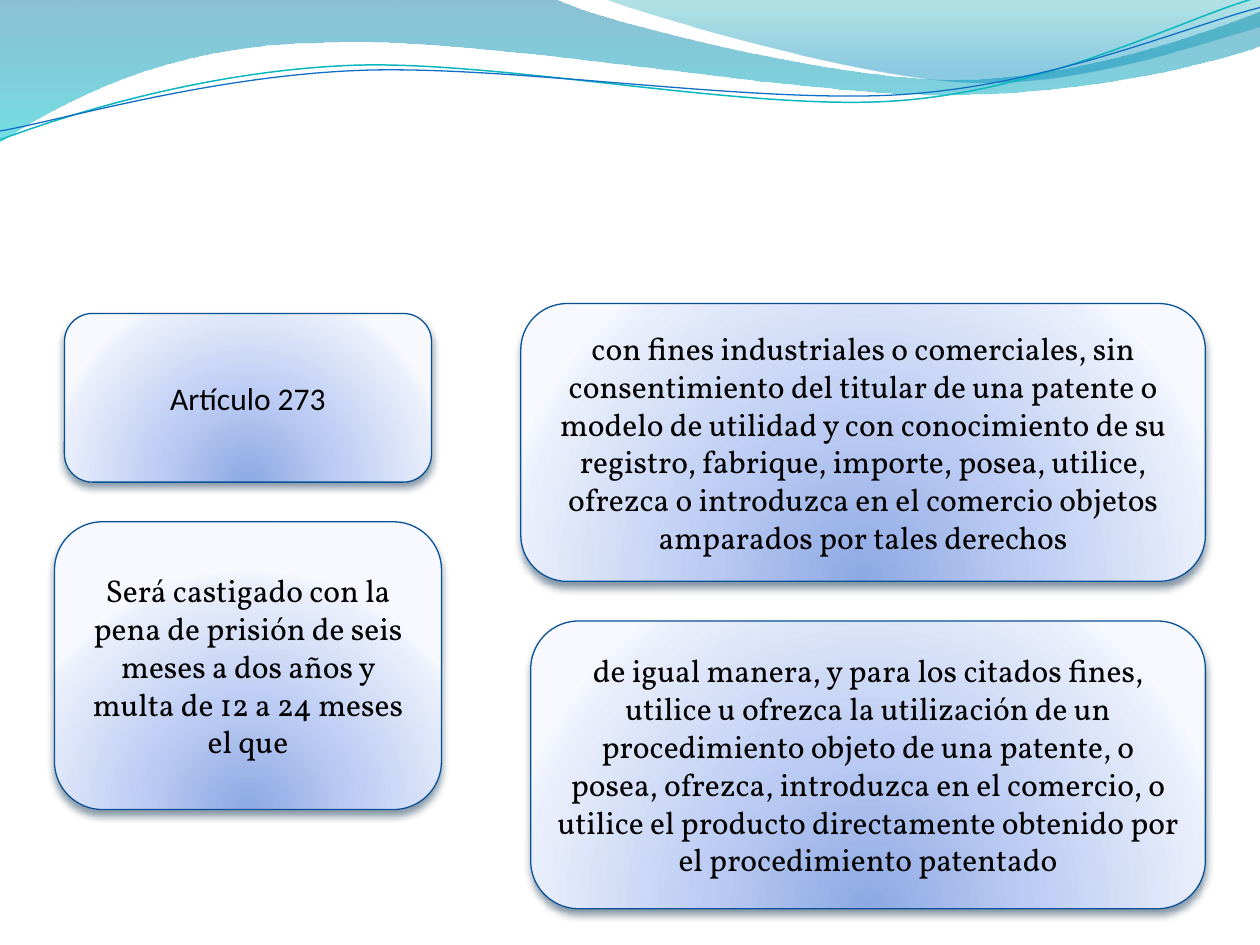
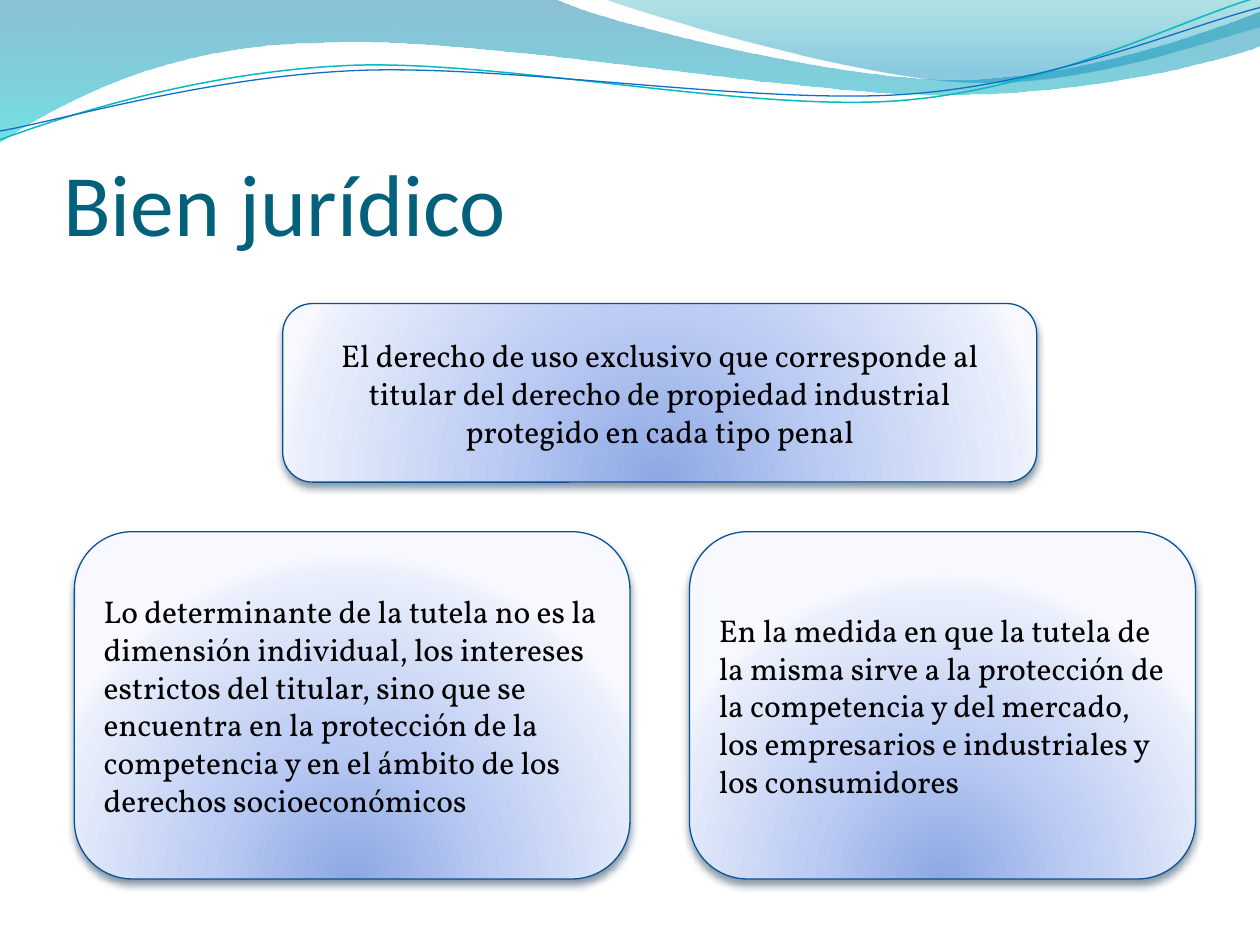
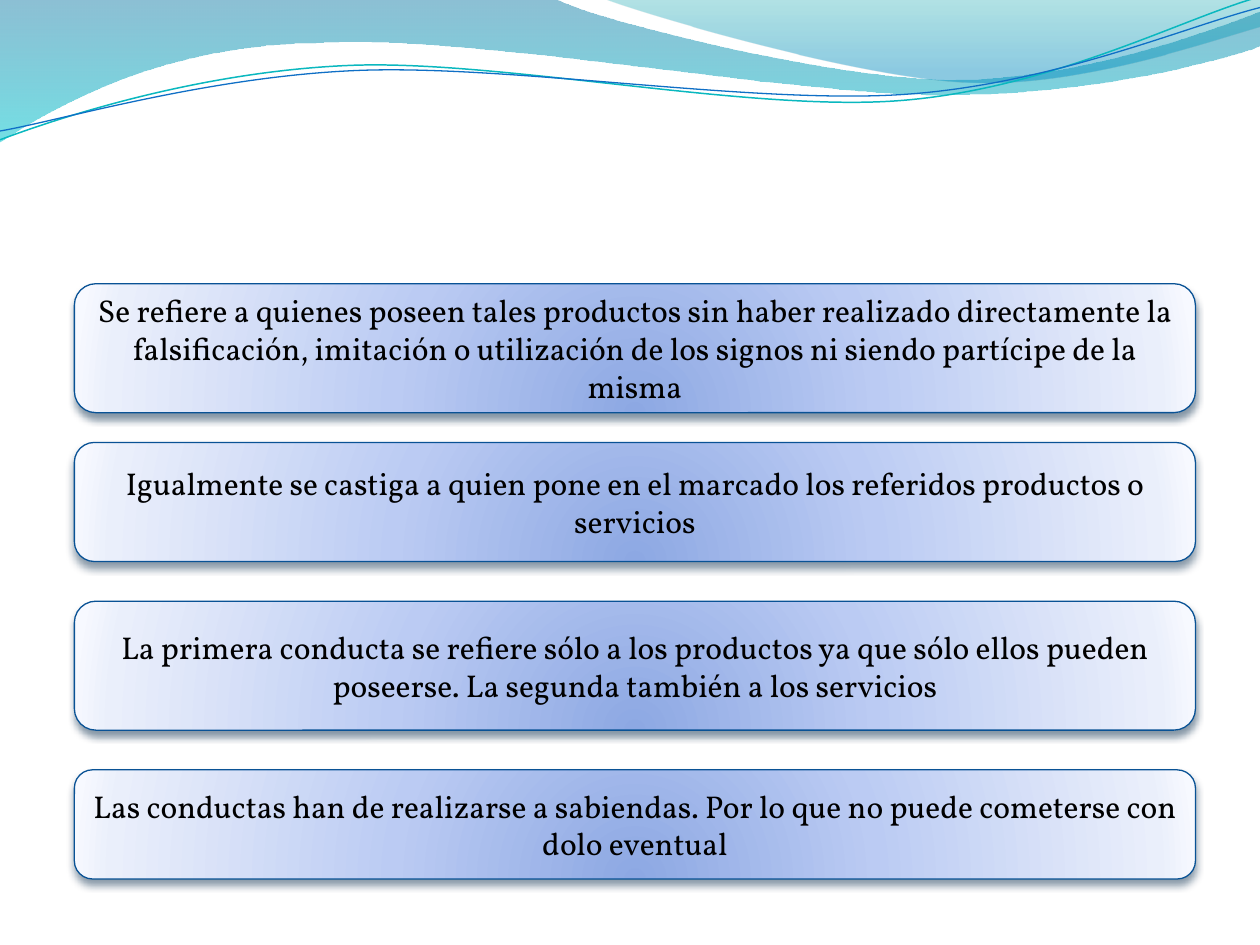
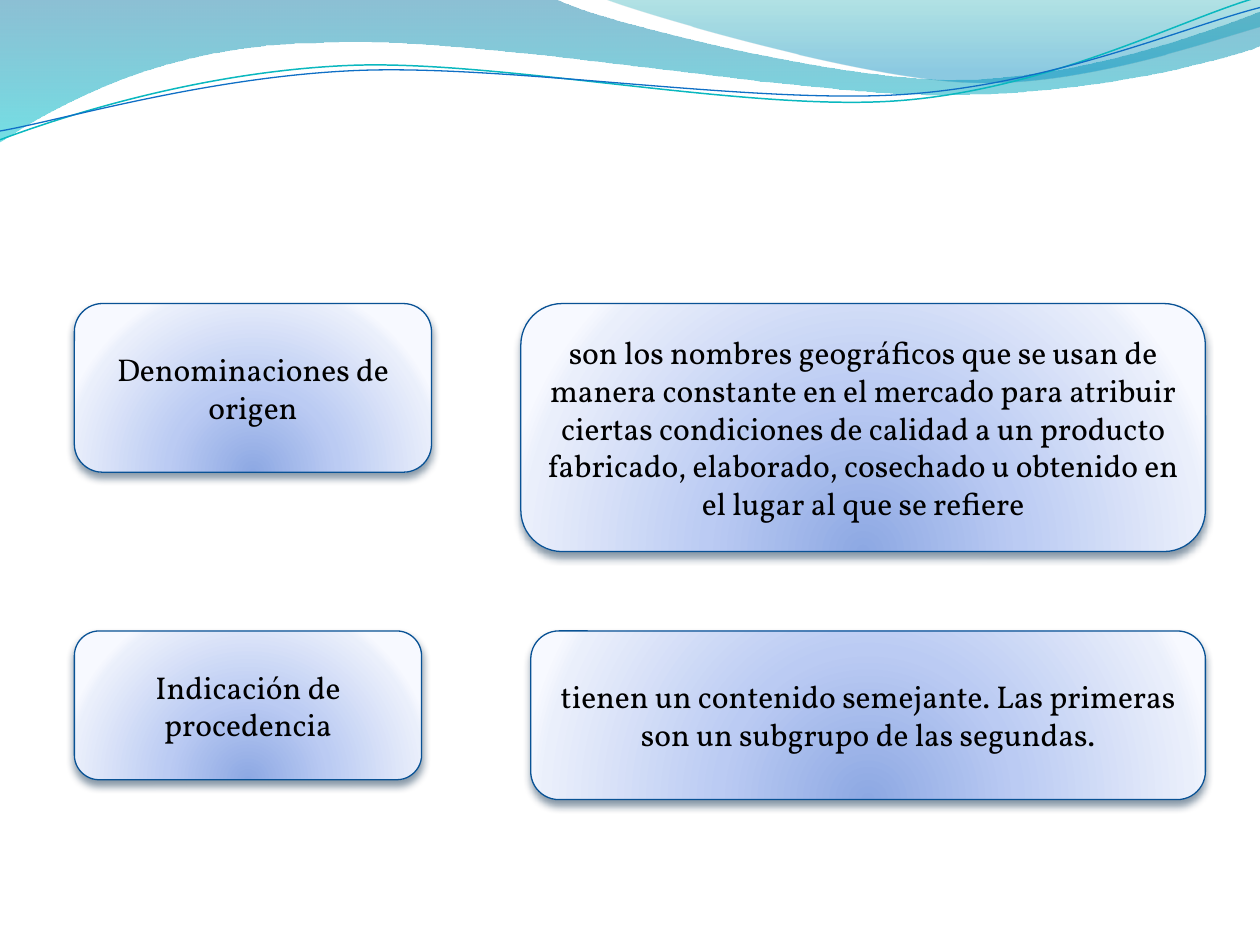
import pptx
import pptx.dml.color
import pptx.enum.shapes
import pptx.enum.text
import pptx.oxml
import pptx.oxml.ns
import pptx.util

ALIGN = pptx.enum.text.PP_ALIGN
ANCHOR = pptx.enum.text.MSO_ANCHOR
BLANK_LAYOUT, TITLE_LAYOUT = 6, 5

# Cards sit on a 2 mm grid that starts at the top left of the content area.
CELL = pptx.util.Cm(0.2)
GRID_LEFT, GRID_TOP = pptx.util.Cm(1.5), pptx.util.Cm(6.12)

# Gradient stops: position, colour, opacity (all in percent).
CARD_STOPS = [(0, "8DA8E3", 100), (43, "BBCBF3", 100),
              (93, "EAEFFB", 100), (100, "F7F9FF", 100)]
CARD_GLOW = ('<a:path path="circle"><a:fillToRect l="50000" t="130000" '
             'r="50000" b="-30000"/></a:path>')
DOWNWARD = '<a:lin ang="5400000" scaled="0"/>'

# Wave outlines in hundredths of an inch: a start point, then lines
# (one point) and curves (two control points and an end point).
WAVE_UNIT = pptx.util.Inches(0.01)
BACK_WAVE = [(0, -1), [(440, -1)],
             [(476, 17), (664, 63), (758, 63)],
             [(853, 63), (958, 26), (1000, 9)],
             [(1001, 36)],
             [(983, 44), (870, 76), (746, 75)],
             [(622, 75), (382, 28), (257, 34)],
             [(129, 35), (46, 83), (-1, 113)]]
FRONT_WAVE = [(479, -1),
              [(509, 11), (682, 62), (769, 65)],
              [(856, 69), (961, 32), (1000, 21)],
              [(1000, 0)]]
TEAL_THREAD = [(0, 111),
               [(48, 93), (158, 57), (277, 52)],
               [(395, 47), (593, 89), (713, 80)],
               [(833, 71), (938, 15), (998, -2)]]
BLUE_THREAD = [(0, 104),
               [(47, 96), (164, 61), (283, 56)],
               [(403, 51), (597, 83), (717, 75)],
               [(836, 67), (941, 21), (1000, 6)]]


def rgb(hex_color):
    return pptx.dml.color.RGBColor.from_string(hex_color)


def drawing_xml(tag, attributes, content):
    return pptx.oxml.parse_xml(
        f'<a:{tag} {pptx.oxml.ns.nsdecls("a")} {attributes}>{content}</a:{tag}>')


def color_xml(hex_color, opacity):
    return (f'<a:srgbClr val="{hex_color}">'
            f'<a:alpha val="{opacity * 1000}"/></a:srgbClr>')


def fill_gradient(shape, stops, direction):
    shape.fill.background()
    properties = shape.element.spPr
    stop_list = "".join(
        f'<a:gs pos="{position * 1000}">{color_xml(color, opacity)}</a:gs>'
        for position, color, opacity in stops)
    properties.replace(
        properties.find(pptx.oxml.ns.qn("a:noFill")),
        drawing_xml("gradFill", 'rotWithShape="1"',
                    f"<a:gsLst>{stop_list}</a:gsLst>{direction}"))


class Deck:
    body_font, title_font = "Vollkorn", "Calibri"
    ink, title_color, card_line = "000000", "04617B", "095295"
    body_size, title_size = 18, 50

    def __init__(self):
        self.presentation = pptx.Presentation()
        self.presentation.slide_width = pptx.util.Inches(10)
        self.presentation.slide_height = pptx.util.Inches(7.5)
        self.slide = None

    def new_slide(self, title=None):
        layout = TITLE_LAYOUT if title else BLANK_LAYOUT
        self.slide = self.presentation.slides.add_slide(
            self.presentation.slide_layouts[layout])
        if title:
            self.title(title)

    def format_text(self, frame, text, font, size, color, align):
        frame.word_wrap = True
        frame.text = text
        paragraph = frame.paragraphs[0]
        paragraph.alignment = align
        paragraph.font.name = font
        paragraph.font.size = pptx.util.Pt(size)
        paragraph.font.color.rgb = rgb(color)

    def title(self, text):
        heading = self.slide.shapes.title
        heading.left, heading.top = pptx.util.Inches(0.5), pptx.util.Inches(0.77)
        heading.width, heading.height = pptx.util.Inches(9.08), pptx.util.Inches(1.25)
        frame = heading.text_frame
        frame.vertical_anchor = ANCHOR.BOTTOM
        frame.margin_left = frame.margin_right = frame.margin_bottom = 0
        frame.margin_top = pptx.util.Inches(0.05)
        self.format_text(frame, text, self.title_font, self.title_size,
                         self.title_color, ALIGN.LEFT)

    def card(self, column, row, columns, rows, text,
             align=ALIGN.CENTER, font=body_font):
        """Add a rounded card, placed and sized in grid cells."""
        card = self.slide.shapes.add_shape(
            pptx.enum.shapes.MSO_SHAPE.ROUNDED_RECTANGLE,
            GRID_LEFT + column * CELL, GRID_TOP + row * CELL,
            columns * CELL, rows * CELL)
        fill_gradient(card, CARD_STOPS, CARD_GLOW)
        card.line.color.rgb = rgb(self.card_line)
        card.line.width = pptx.util.Pt(0.75)
        card.shadow.inherit = False
        card.element.spPr.find(pptx.oxml.ns.qn("a:effectLst")).append(
            drawing_xml("outerShdw",
                        f'blurRad="{pptx.util.Pt(4.5)}" dist="{pptx.util.Pt(3)}" '
                        'dir="5400000" rotWithShape="0"',
                        color_xml("042747", 48)))
        card.text_frame.vertical_anchor = ANCHOR.MIDDLE
        self.format_text(card.text_frame, text, font, self.body_size, self.ink, align)

    def curve(self, outline, closed):
        """Draw an outline whose three-point segments are Bézier curves."""
        start, *segments = outline
        builder = self.slide.shapes.build_freeform(*start, scale=WAVE_UNIT)
        builder.add_line_segments(
            [point for segment in segments for point in segment], close=closed)
        shape = builder.convert_to_shape()
        shape.shadow.inherit = False
        steps = iter(list(shape.element.iter(pptx.oxml.ns.qn("a:lnTo"))))
        for segment in segments:
            points = [next(steps) for _ in segment]
            if len(points) == 3:
                bezier = drawing_xml("cubicBezTo", "", "")
                points[0].addprevious(bezier)
                for step in points:
                    bezier.append(step[0])
                    step.getparent().remove(step)
        return shape

    def wave(self, outline, stops):
        wave = self.curve(outline, closed=True)
        fill_gradient(wave, stops, DOWNWARD)
        wave.line.fill.background()
        return wave

    def thread(self, outline, color, width):
        thread = self.curve(outline, closed=False)
        thread.fill.background()
        thread.line.color.rgb = rgb(color)
        thread.line.width = pptx.util.Pt(width)
        return thread

    def master_waves(self):
        """Draw the wave band on the current slide and move it to the master."""
        band = [
            self.wave(BACK_WAVE, [(0, "0074A1", 45), (100, "00C6CF", 55)]),
            self.wave(FRONT_WAVE, [(0, "00A1A9", 30), (80, "008BBF", 45)]),
            self.thread(TEAL_THREAD, "0AB8BF", 0.85),
            self.thread(BLUE_THREAD, "0F6FC6", 0.75),
        ]
        master_tree = self.presentation.slide_master.element.cSld.spTree
        for index, part in enumerate(band):
            part.element.nvSpPr.cNvPr.set("id", str(100 + index))
            master_tree.insert(2 + index, part.element)


def main():
    deck = Deck()

    deck.new_slide()
    deck.master_waves()
    deck.card(45, 0, 69, 28,
              "con fines industriales o comerciales, sin consentimiento del titular "
              "de una patente o modelo de utilidad y con conocimiento de su registro, "
              "fabrique, importe, posea, utilice, ofrezca o introduzca en el comercio "
              "objetos amparados por tales derechos")
    deck.card(46, 32, 68, 29,
              "de igual manera, y para los citados fines, utilice u ofrezca la "
              "utilización de un procedimiento objeto de una patente, o posea, "
              "ofrezca, introduzca en el comercio, o utilice el producto directamente "
              "obtenido por el procedimiento patentado")
    deck.card(-1, 1, 37, 17, "Artículo 273", font=deck.title_font)
    deck.card(-2, 22, 39, 29,
              "Será castigado con la pena de prisión de seis meses a dos años y "
              "multa de 12 a 24 meses el que")

    deck.new_slide("Bien jurídico")
    deck.card(21, 0, 76, 18,
              "El derecho de uso exclusivo que corresponde al titular del derecho "
              "de propiedad industrial protegido en cada tipo penal")
    deck.card(0, 23, 56, 35,
              "Lo determinante de la tutela no es la dimensión individual, los "
              "intereses estrictos del titular, sino que se encuentra en la "
              "protección de la competencia y en el ámbito de los derechos "
              "socioeconómicos", ALIGN.LEFT)
    deck.card(62, 23, 51, 35,
              "En la medida en que la tutela de la misma sirve a la protección de "
              "la competencia y del mercado, los empresarios e industriales y los "
              "consumidores", ALIGN.LEFT)

    deck.new_slide()
    for row, rows, conduct in [
        (-2, 13, "Se refiere a quienes poseen tales productos sin haber realizado "
                 "directamente la falsificación, imitación o utilización de los "
                 "signos ni siendo partícipe de la misma"),
        (14, 12, "Igualmente se castiga a quien pone en el marcado los referidos "
                 "productos o servicios"),
        (30, 13, "La primera conducta se refiere sólo a los productos ya que sólo "
                 "ellos pueden poseerse. La segunda también a los servicios"),
        (47, 11, "Las conductas han de realizarse a sabiendas. Por lo que no puede "
                 "cometerse con dolo eventual"),
    ]:
        deck.card(0, row, 113, rows, conduct)

    deck.new_slide()
    deck.card(0, 0, 36, 17, "Denominaciones de origen")
    deck.card(45, 0, 69, 25,
              "son los nombres geográficos que se usan de manera constante en el "
              "mercado para atribuir ciertas condiciones de calidad a un producto "
              "fabricado, elaborado, cosechado u obtenido en el lugar al que se refiere")
    deck.card(0, 33, 35, 15, "Indicación de procedencia")
    deck.card(46, 33, 68, 17,
              "tienen un contenido semejante. Las primeras son un subgrupo de las "
              "segundas.")

    deck.presentation.save("out.pptx")


if __name__ == "__main__":
    main()
